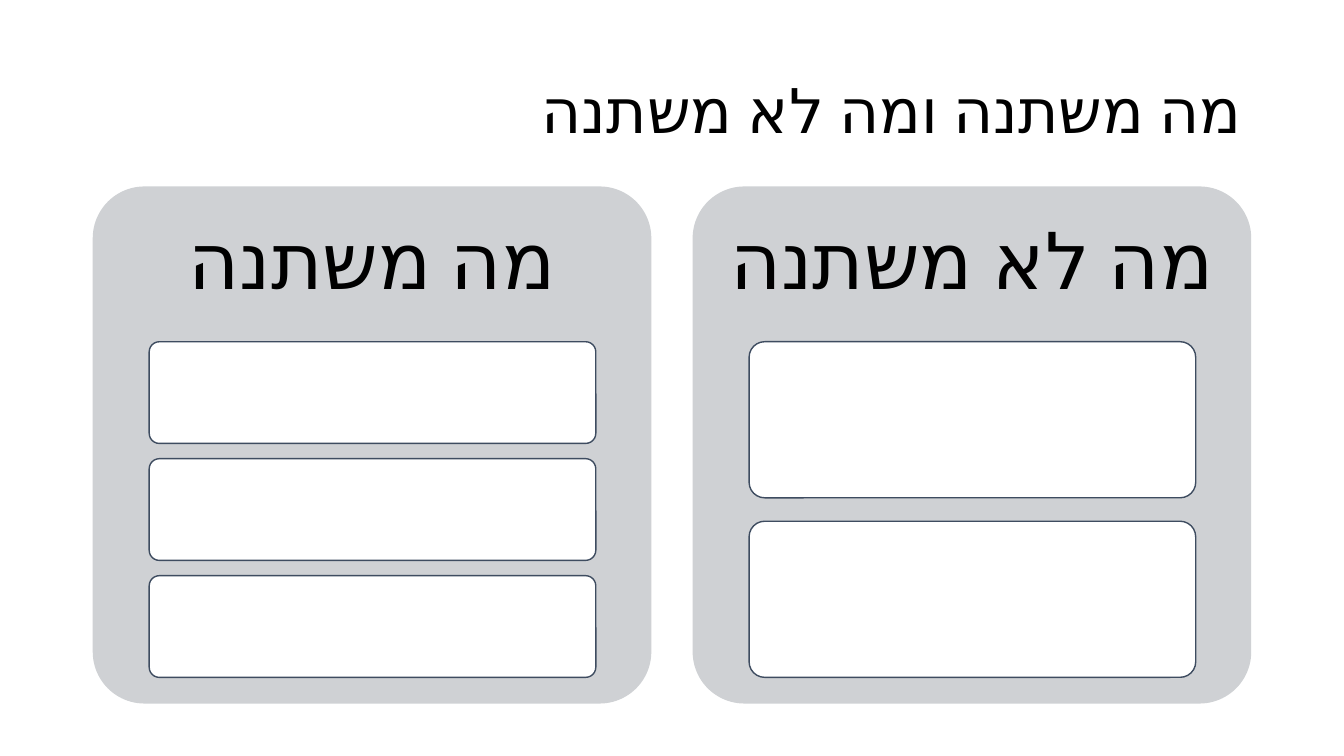
from dataclasses import dataclass

from lxml.etree import SubElement
from pptx import Presentation
from pptx.dml.color import RGBColor
from pptx.enum.shapes import MSO_SHAPE
from pptx.enum.text import MSO_ANCHOR, PP_ALIGN
from pptx.oxml.ns import qn
from pptx.slide import Slide
from pptx.util import Inches, Pt

COLORS = {"text": "000000", "panel": "CFD1D4", "card": "FFFFFF", "border": "3E4C60"}
FONT = "Roboto"
PANEL_TOP, PANEL_WIDTH, PANEL_HEIGHT = 1.85, 5.54, 5.13
HEADING_HEIGHT = 1.54
CARD_INDENT, CARD_WIDTH = 0.56, 4.43
CARDS_HEIGHT = 3.33
GAP_RATIO = 0.15


@dataclass(frozen=True)
class Box:
    left: float
    top: float
    width: float
    height: float

    def lengths(self) -> list[int]:
        return [Inches(n) for n in (self.left, self.top, self.width, self.height)]


@dataclass(frozen=True)
class Panel:
    heading: str
    left: float
    cards: int


PANELS = [Panel("מה לא משתנה", 6.87, 2), Panel("מה משתנה", 0.92, 3)]


def color(name: str) -> RGBColor:
    return RGBColor.from_string(COLORS[name])


def apply_format(target: object, values: dict[str, object]) -> None:
    for name, value in values.items():
        setattr(target, name, value)


def add_hebrew(slide: Slide, words: str, box: Box, size: int,
               alignment: PP_ALIGN, side: float, edge: float) -> None:
    frame = slide.shapes.add_textbox(*box.lengths()).text_frame
    apply_format(frame, {
        "word_wrap": True,
        "vertical_anchor": MSO_ANCHOR.MIDDLE,
        "margin_left": Inches(side),
        "margin_right": Inches(side),
        "margin_top": Inches(edge),
        "margin_bottom": Inches(edge),
    })
    line = frame.paragraphs[0]
    apply_format(line, {"alignment": alignment, "line_spacing": 0.9})
    line._p.get_or_add_pPr().set("rtl", "1")
    run = line.add_run()
    run.text = words
    apply_format(run.font, {"size": Pt(size), "name": FONT})
    run.font.color.rgb = color("text")
    properties = run._r.get_or_add_rPr()
    properties.set("lang", "he-IL")
    SubElement(properties, qn("a:cs")).set("typeface", FONT)


def add_rounded(slide: Slide, box: Box, fill: str, border: str | None = None) -> None:
    rounded = slide.shapes.add_shape(MSO_SHAPE.ROUNDED_RECTANGLE, *box.lengths())
    rounded.adjustments[0] = 0.1
    rounded.shadow.inherit = False
    rounded.fill.solid()
    rounded.fill.fore_color.rgb = color(fill)
    if border:
        rounded.line.color.rgb = color(border)
        rounded.line.width = Pt(1)
    else:
        rounded.line.fill.background()


def add_panel(slide: Slide, panel: Panel) -> None:
    add_rounded(slide, Box(panel.left, PANEL_TOP, PANEL_WIDTH, PANEL_HEIGHT), "panel")
    heading_box = Box(panel.left, PANEL_TOP, PANEL_WIDTH, HEADING_HEIGHT)
    add_hebrew(slide, panel.heading, heading_box, 56, PP_ALIGN.CENTER, 0.23, 0.23)
    card_height = CARDS_HEIGHT / (panel.cards + (panel.cards - 1) * GAP_RATIO)
    for index in range(panel.cards):
        top = PANEL_TOP + HEADING_HEIGHT + index * card_height * (1 + GAP_RATIO)
        card = Box(panel.left + CARD_INDENT, top, CARD_WIDTH, card_height)
        add_rounded(slide, card, "card", "border")


def main() -> None:
    deck = Presentation()
    apply_format(deck, {"slide_width": Inches(13.33), "slide_height": Inches(7.5)})
    slide = deck.slides.add_slide(deck.slide_layouts[6])
    add_hebrew(slide, "מה משתנה ומה לא משתנה", Box(0.92, 0.4, 11.5, 1.45), 44,
               PP_ALIGN.RIGHT, 0.1, 0.05)
    for panel in PANELS:
        add_panel(slide, panel)
    deck.save("out.pptx")


if __name__ == "__main__":
    main()
